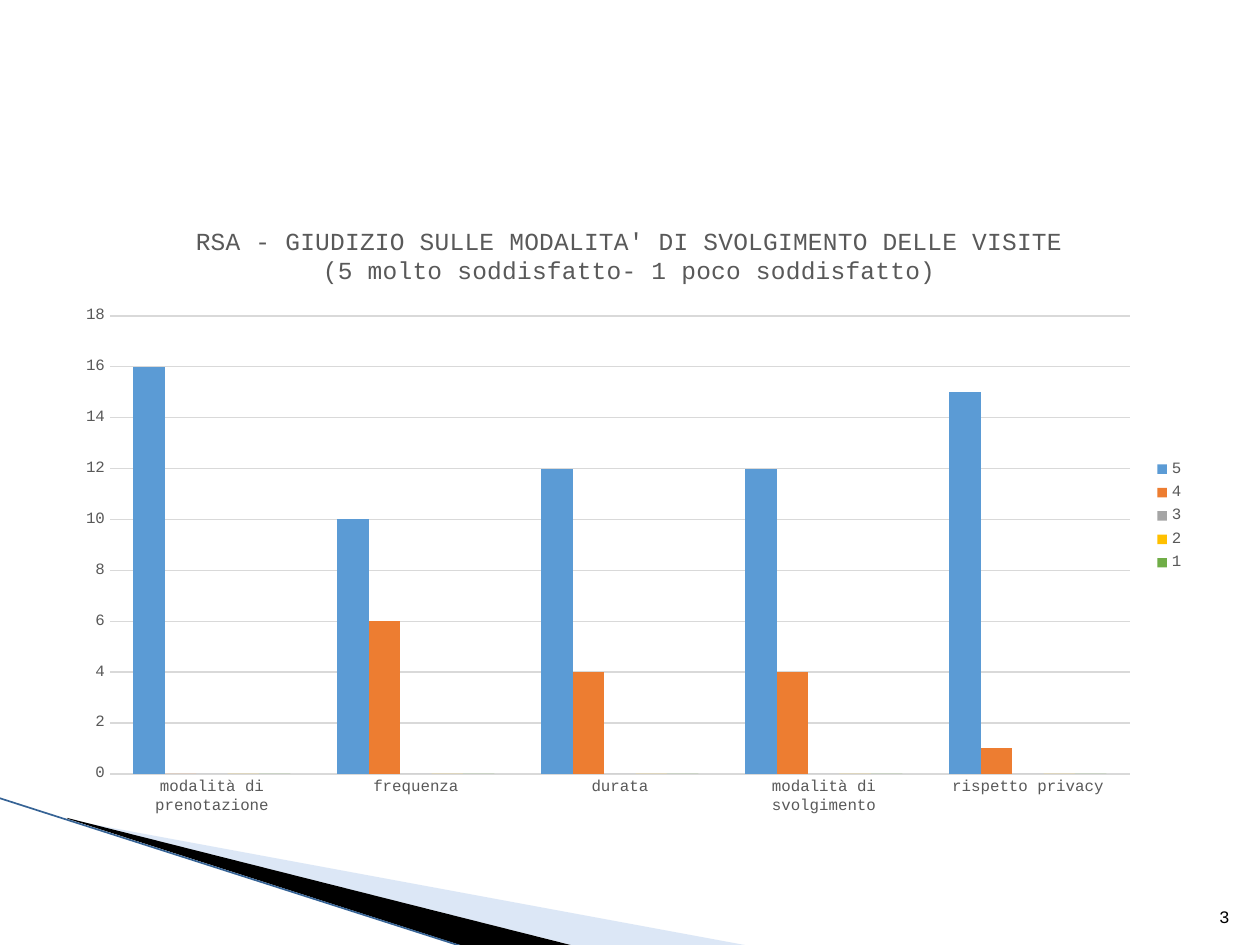
from lxml import etree
from pptx import Presentation
from pptx.chart.data import CategoryChartData
from pptx.dml.color import RGBColor
from pptx.enum.chart import XL_CHART_TYPE, XL_LEGEND_POSITION, XL_TICK_MARK
from pptx.enum.shapes import MSO_CONNECTOR
from pptx.enum.text import MSO_ANCHOR, PP_ALIGN
from pptx.oxml import parse_xml
from pptx.oxml.ns import nsdecls, qn
from pptx.util import Pt

PX = 914400 // 126
FONT = "Courier New"
BLACK = RGBColor(0, 0, 0)
GRAY = RGBColor(0x59, 0x59, 0x59)
GRID = RGBColor(0xD9, 0xD9, 0xD9)
PALE_BLUE = RGBColor(0xA9, 0xC5, 0xE9)
EDGE_BLUE = RGBColor(0x36, 0x63, 0x95)

TITLE = [
    "RSA - GIUDIZIO SULLE MODALITA' DI SVOLGIMENTO DELLE VISITE",
    "(5 molto soddisfatto- 1 poco soddisfatto)",
]
CATEGORIES = ["modalità di prenotazione", "frequenza", "durata",
              "modalità di svolgimento", "rispetto privacy"]
SERIES = [
    ("5", (16, 10, 12, 12, 15), RGBColor(0x5B, 0x9B, 0xD5)),
    ("4", (0, 6, 4, 4, 1), RGBColor(0xED, 0x7D, 0x31)),
    ("3", (0, 0, 0, 0, 0), RGBColor(0xA5, 0xA5, 0xA5)),
    ("2", (0, 0, 0, 0, 0), RGBColor(0xFF, 0xC0, 0x00)),
    ("1", (0, 0, 0, 0, 0), RGBColor(0x70, 0xAD, 0x47)),
]
# Corner wedges: frame and points in px, fill, opacity in percent
WEDGES = [
    ((98, 689, 524, 199), [(69, 820), (750, 946), (575, 946), (69, 819)], PALE_BLUE, 40),
    ((-8, 798, 524, 116), [(67, 818), (574, 946), (469, 948), (68, 819)], BLACK, 100),
]
EDGE = (-1, 798, 467, 948)
CHART_BOX = (63, 204, 1134, 624)
PLOT_BOX = (110, 316, 1020, 458)
TITLE_CORNER = (192, 223)
NUMBER_BOX = (1192, 883, 50, 50)


def emu(values):
    return [value * PX for value in values]


def style(font, size, color):
    font.name, font.size, font.bold = FONT, Pt(size), False
    font.color.rgb = color


def set_frame(shape, frame):
    """Give a freeform a frame that its outline may reach beyond."""
    left, top, width, height = emu(frame)
    shift_x, shift_y = shape.left - left, shape.top - top
    outline = shape._element.spPr.find(".//" + qn("a:path"))
    outline.set("w", str(width))
    outline.set("h", str(height))
    for point in outline.iter(qn("a:pt")):
        point.set("x", str(int(point.get("x")) * PX + shift_x))
        point.set("y", str(int(point.get("y")) * PX + shift_y))
    shape.left, shape.top, shape.width, shape.height = left, top, width, height


def add_wedge(page, frame, points, color, opacity):
    builder = page.shapes.build_freeform(*points[0], scale=PX)
    builder.add_line_segments(points[1:], close=True)
    wedge = builder.convert_to_shape()
    set_frame(wedge, frame)
    wedge.shadow.inherit = False
    wedge.fill.solid()
    wedge.fill.fore_color.rgb = color
    wedge.line.fill.background()
    if opacity < 100:
        fill_color = wedge.fill._xPr.find(qn("a:solidFill"))[0]
        etree.SubElement(fill_color, qn("a:alpha")).set("val", str(opacity * 1000))


def add_edge(page):
    edge = page.shapes.add_connector(MSO_CONNECTOR.STRAIGHT, *emu(EDGE))
    edge.line.color.rgb = EDGE_BLUE
    edge.line.width = Pt(0.95)
    etree.SubElement(edge._element.spPr, qn("a:effectLst"))


def add_page_number(page, number):
    box = page.shapes.add_textbox(*emu(NUMBER_BOX))
    frame = box.text_frame
    frame.word_wrap = True
    frame.vertical_anchor = MSO_ANCHOR.BOTTOM
    frame.text = number
    paragraph = frame.paragraphs[0]
    paragraph.alignment = PP_ALIGN.RIGHT
    style(paragraph.runs[0].font, 10, BLACK)


def place(parent, corner, size=None):
    """Fix a chart part at px positions, as fractions of the chart frame."""
    left, top, width, height = CHART_BOX
    parts = {"x": (corner[0] - left) / width, "y": (corner[1] - top) / height}
    modes = '<c:xMode val="edge"/><c:yMode val="edge"/>'
    target = ""
    if size:
        parts.update(w=size[0] / width, h=size[1] / height)
        target = '<c:layoutTarget val="inner"/>'
    values = "".join(f'<c:{key} val="{part:.4f}"/>' for key, part in parts.items())
    layout = parse_xml(f'<c:layout {nsdecls("c")}><c:manualLayout>{target}{modes}'
                       f'{values}</c:manualLayout></c:layout>')
    for old in parent.findall(qn("c:layout")):
        parent.remove(old)
    text = parent.find(qn("c:tx"))
    parent.insert(0 if text is None else 1, layout)


def add_ratings_chart(page):
    data = CategoryChartData()
    data.categories = CATEGORIES
    for name, values, _ in SERIES:
        data.add_series(name, values)
    chart = page.shapes.add_chart(
        XL_CHART_TYPE.COLUMN_CLUSTERED, *emu(CHART_BOX), data).chart
    style(chart.font, 10, BLACK)

    frame = chart.chart_title.text_frame
    frame.text = "\n".join(TITLE)
    for paragraph in frame.paragraphs:
        style(paragraph.runs[0].font, 14, GRAY)
    chart.chart_title.include_in_layout = False
    place(chart.chart_title._element, TITLE_CORNER)

    plot = chart.plots[0]
    plot.gap_width, plot.overlap = 150, 0
    plot.vary_by_categories = False
    for series, (_, _, color) in zip(plot.series, SERIES):
        series.format.fill.solid()
        series.format.fill.fore_color.rgb = color
        series.invert_if_negative = False
    place(chart._chartSpace.chart.plotArea, PLOT_BOX[:2], PLOT_BOX[2:])

    for axis in (chart.category_axis, chart.value_axis):
        axis.major_tick_mark = axis.minor_tick_mark = XL_TICK_MARK.NONE
        axis.format.line.fill.background()
        style(axis.tick_labels.font, 9, GRAY)
    scale = chart.value_axis
    scale.minimum_scale, scale.maximum_scale, scale.major_unit = 0, 18, 2
    grid = scale.major_gridlines.format.line
    grid.color.rgb, grid.width = GRID, Pt(0.75)

    chart.has_legend = True
    chart.legend.position = XL_LEGEND_POSITION.RIGHT
    chart.legend.include_in_layout = False
    style(chart.legend.font, 9, GRAY)


def main():
    deck = Presentation()
    deck.slide_width, deck.slide_height = emu((1260, 945))
    page = deck.slides.add_slide(deck.slide_layouts[6])
    for wedge in WEDGES:
        add_wedge(page, *wedge)
    add_edge(page)
    add_page_number(page, "3")
    add_ratings_chart(page)
    deck.save("out.pptx")


if __name__ == "__main__":
    main()
